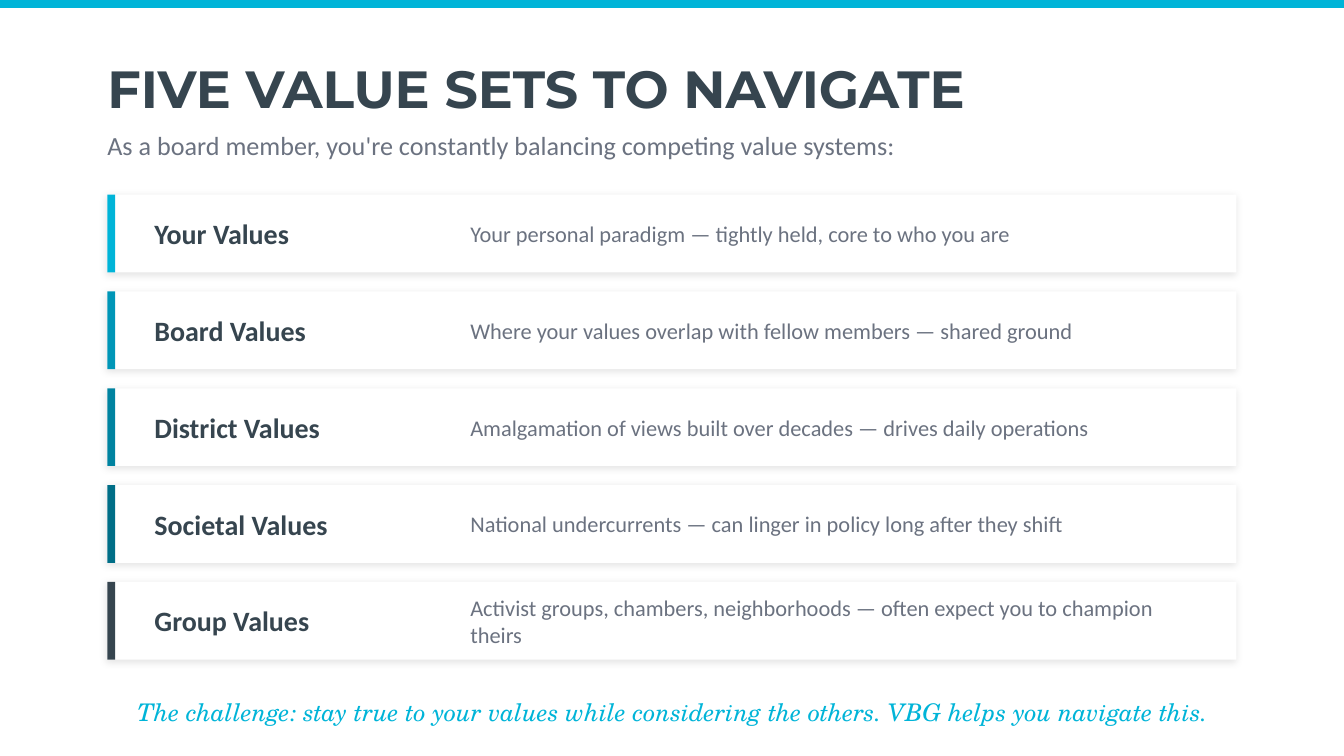
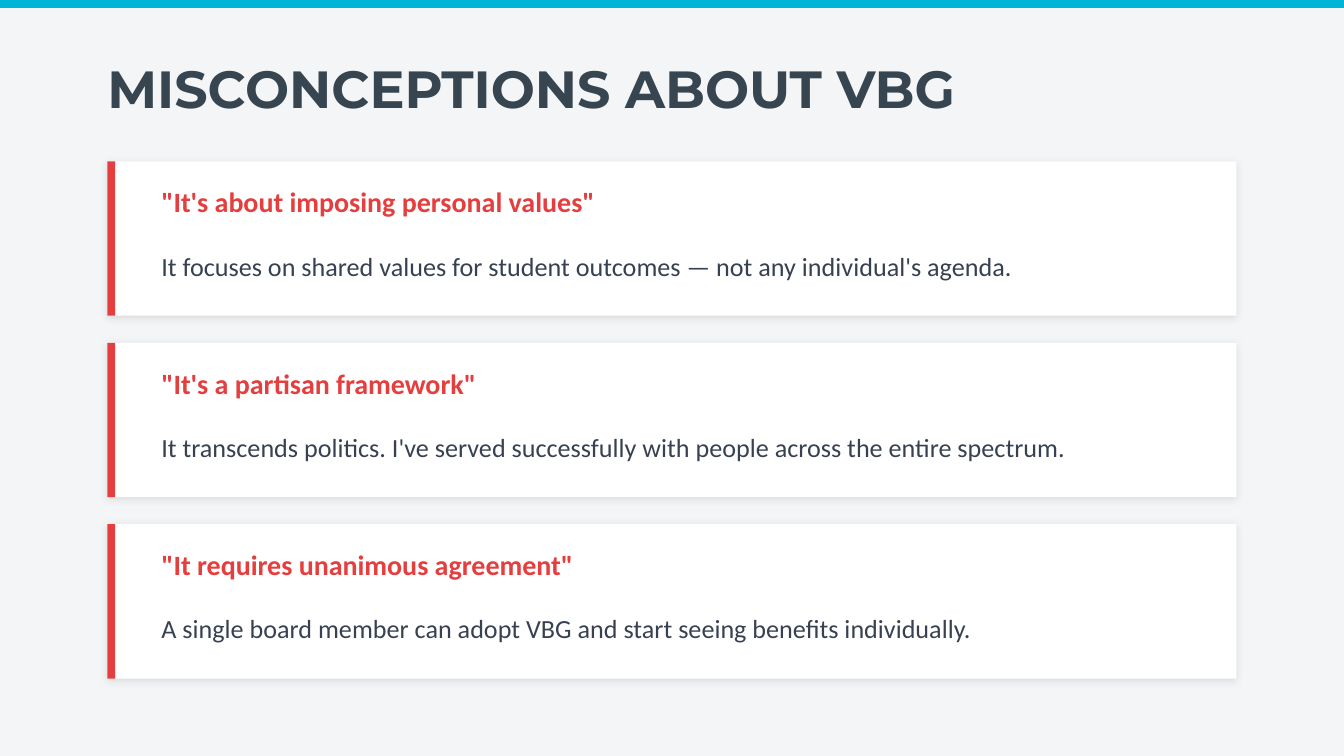
from lxml.etree import SubElement
from pptx import Presentation
from pptx.dml.color import RGBColor
from pptx.enum.shapes import MSO_SHAPE
from pptx.enum.text import MSO_ANCHOR, MSO_AUTO_SIZE, PP_ALIGN
from pptx.oxml.ns import qn
from pptx.util import Cm, Pt

COLORS = {
    "white": "FFFFFF", "page": "F4F5F7", "black": "000000",
    "cyan": "00B4D8", "cyan2": "0096B7", "cyan3": "0083A0", "cyan4": "006E87",
    "slate": "36454F", "gray": "6B7280", "ink": "374151", "red": "E53E3E",
}

STYLES = {
    "title": {"name": "Montserrat", "size": Pt(28), "bold": True},
    "heading": {"name": "Calibri", "size": Pt(15), "bold": True},
    "body": {"name": "Calibri", "size": Pt(14)},
    "detail": {"name": "Calibri", "size": Pt(12)},
    "closing": {"name": "TeX Gyre Schola", "size": Pt(13), "italic": True},
}

# Shared page geometry, in centimetres
PAGE_W, PAGE_H = 25.4, 14.29
LEFT, WIDTH = 2.03, 21.34
BAR = 0.15

VALUE_SETS = [
    ("Your Values", "Your personal paradigm — tightly held, core to who you are", "cyan"),
    ("Board Values", "Where your values overlap with fellow members — shared ground", "cyan2"),
    ("District Values", "Amalgamation of views built over decades — drives daily operations", "cyan3"),
    ("Societal Values", "National undercurrents — can linger in policy long after they shift", "cyan4"),
    ("Group Values", "Activist groups, chambers, neighborhoods — often expect you to champion theirs", "slate"),
]

MISCONCEPTIONS = [
    ('"It\'s about imposing personal values"',
     "It focuses on shared values for student outcomes — not any individual's agenda."),
    ('"It\'s a partisan framework"',
     "It transcends politics. I've served successfully with people across the entire spectrum."),
    ('"It requires unanimous agreement"',
     "A single board member can adopt VBG and start seeing benefits individually."),
]


def rgb(color):
    return RGBColor.from_string(COLORS[color])


def fill_text(sp, text, style, color, align=PP_ALIGN.LEFT):
    tf = sp.text_frame
    frame = {"word_wrap": True, "auto_size": MSO_AUTO_SIZE.NONE,
             "vertical_anchor": MSO_ANCHOR.MIDDLE, "margin_left": 0,
             "margin_right": 0, "margin_top": 0, "margin_bottom": 0}
    for key, value in frame.items():
        setattr(tf, key, value)
    p = tf.paragraphs[0]
    p.alignment = align
    r = p.add_run()
    r.text = text
    for key, value in STYLES[style].items():
        setattr(r.font, key, value)
    r.font.color.rgb = rgb(color)


def add_text(s, box, text, style, color, align=PP_ALIGN.LEFT):
    sp = s.shapes.add_textbox(*map(Cm, box))
    fill_text(sp, text, style, color, align)


def add_rect(s, box, color):
    sp = s.shapes.add_shape(MSO_SHAPE.RECTANGLE, *map(Cm, box))
    sp.shadow.inherit = False
    sp.fill.solid()
    sp.fill.fore_color.rgb = rgb(color)
    sp.line.fill.background()
    return sp


def add_soft_shadow(sp):
    effects = sp.shadow._element.find(qn("a:effectLst"))
    shadow = SubElement(effects, qn("a:outerShdw"), blurRad=str(Pt(4)),
                        dist=str(Pt(1)), dir=str(135 * 60000),
                        algn="bl", rotWithShape="0")
    color = SubElement(shadow, qn("a:srgbClr"), val=COLORS["black"])
    SubElement(color, qn("a:alpha"), val="10000")


def add_card(s, box, accent):
    """White panel with a coloured bar along its left edge."""
    x, y, w, h = box
    add_soft_shadow(add_rect(s, box, "white"))
    add_rect(s, (x, y, BAR, h), accent)


def add_page(prs, title, background):
    """Background, top band and title that every slide shares."""
    s = prs.slides.add_slide(prs.slide_layouts[5])
    s.background.fill.solid()
    s.background.fill.fore_color.rgb = rgb(background)
    add_rect(s, (0, 0, PAGE_W, BAR), "cyan")
    sp = s.shapes.title
    place = {"left": LEFT, "top": 0.76, "width": WIDTH, "height": 1.78}
    for key, value in place.items():
        setattr(sp, key, Cm(value))
    fill_text(sp, title, "title", "slate")
    return s


def add_value_row(s, box, name, detail, accent):
    x, y, w, h = box
    add_card(s, box, accent)
    add_text(s, (x + 0.89, y + 0.1, 5.84, 1.27), name, "heading", "slate")
    add_text(s, (x + 6.86, y + 0.1, 13.72, 1.27), detail, "detail", "gray")


def add_misconception(s, box, claim, answer):
    x, y, w, h = box
    add_card(s, box, "red")
    add_text(s, (x + 1.02, y + 0.25, 19.3, 1.02), claim, "heading", "red")
    add_text(s, (x + 1.02, y + 1.4, 19.3, 1.14), answer, "body", "ink")


def values_slide(prs):
    s = add_page(prs, "FIVE VALUE SETS TO NAVIGATE", "white")
    # Introduction
    add_text(s, (LEFT, 2.29, WIDTH, 0.89),
             "As a board member, you're constantly balancing competing value systems:",
             "body", "gray")
    # One row per value set
    for i, row in enumerate(VALUE_SETS):
        add_value_row(s, (LEFT, 3.68 + i * 1.83, WIDTH, 1.47), *row)
    # Closing line
    add_text(s, (LEFT, 13.08, WIDTH, 0.76),
             "The challenge: stay true to your values while considering the others. "
             "VBG helps you navigate this.",
             "closing", "cyan", PP_ALIGN.CENTER)


def misconceptions_slide(prs):
    s = add_page(prs, "MISCONCEPTIONS ABOUT VBG", "page")
    # One card per misconception
    for i, card in enumerate(MISCONCEPTIONS):
        add_misconception(s, (LEFT, 3.05 + i * 3.43, WIDTH, 2.92), *card)


def main():
    prs = Presentation()
    prs.slide_width, prs.slide_height = Cm(PAGE_W), Cm(PAGE_H)
    values_slide(prs)
    misconceptions_slide(prs)
    prs.save("out.pptx")


if __name__ == "__main__":
    main()
